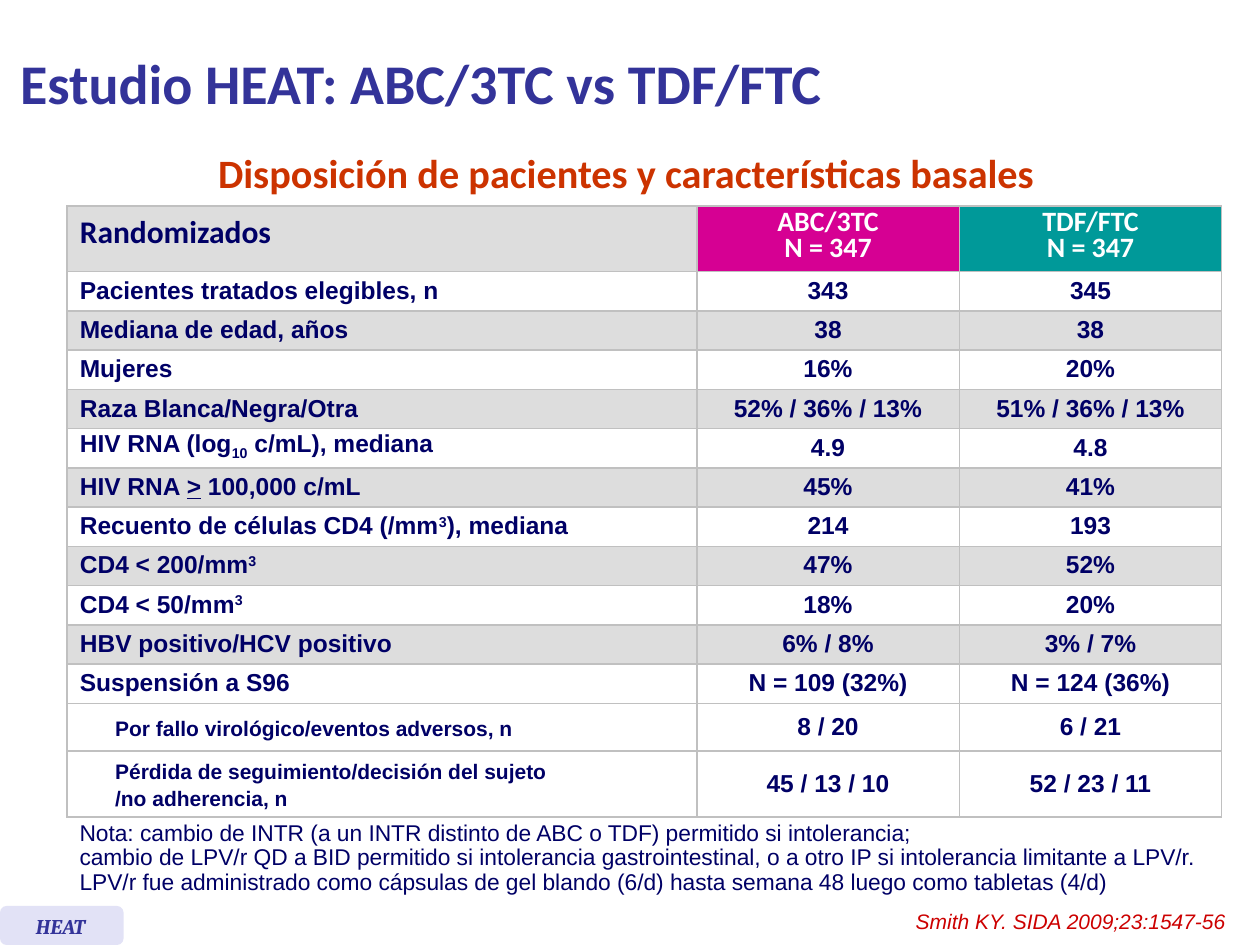
from typing import NamedTuple

from lxml import etree
from pptx import Presentation
from pptx.dml.color import RGBColor
from pptx.enum import shapes, text
from pptx.oxml import ns
from pptx.util import Pt

NAVY = RGBColor(0x00, 0x00, 0x66)
INDIGO = RGBColor(0x33, 0x33, 0x99)
RUST = RGBColor(0xCC, 0x33, 0x00)
RED = RGBColor(0xCC, 0x00, 0x00)
PINK = RGBColor(0xD6, 0x00, 0x93)
TEAL = RGBColor(0x00, 0x99, 0x99)
LILAC = RGBColor(0xE2, 0xE2, 0xF6)
GREY = RGBColor(0xDD, 0xDD, 0xDD)
EDGE = RGBColor(0xC0, 0xC0, 0xC0)
WHITE = RGBColor(0xFF, 0xFF, 0xFF)

LEAD = Pt(15.2)
COLS = (20.2, 339.6, 150, 150)
TALL, LOW = 37.6, 22.4
LEFT, MID = text.PP_ALIGN.LEFT, text.PP_ALIGN.CENTER


class Span(NamedTuple):
    text: str
    base: int = 0
    under: bool = False


class Row(NamedTuple):
    label: tuple
    abc: str
    tdf: str
    sub: bool = False


class Box(NamedTuple):
    left: float
    top: float
    width: float
    height: float


def plain(label: str, abc: str, tdf: str, sub: bool = False) -> Row:
    return Row((Span(label),), abc, tdf, sub)


CUBE = Span("3", 30)
ROWS = (
    plain("Pacientes tratados elegibles, n", "343", "345"),
    plain("Mediana de edad, años", "38", "38"),
    plain("Mujeres", "16%", "20%"),
    plain("Raza Blanca/Negra/Otra", "52% / 36% / 13%", "51% / 36% / 13%"),
    Row((Span("HIV RNA (log"), Span("10", -25), Span(" c/mL), mediana")), "4.9", "4.8"),
    Row((Span("HIV RNA "), Span(">", under=True), Span(" 100,000 c/mL")), "45%", "41%"),
    Row((Span("Recuento de células CD4 (/mm"), CUBE, Span("), mediana")), "214", "193"),
    Row((Span("CD4 < 200/mm"), CUBE), "47%", "52%"),
    Row((Span("CD4 < 50/mm"), CUBE), "18%", "20%"),
    plain("HBV positivo/HCV positivo", "6% / 8%", "3% / 7%"),
    plain("Suspensión a S96", "N = 109 (32%)", "N = 124 (36%)"),
    plain("Por fallo virológico/eventos adversos, n", "8 / 20", "6 / 21", True),
    plain("Pérdida de seguimiento/decisión del sujeto\n/no adherencia, n",
          "45 / 13 / 10", "52 / 23 / 11", True),
)
NOTES = (
    "Nota: cambio de INTR (a un INTR distinto de ABC o TDF) permitido si intolerancia;",
    "cambio de LPV/r QD a BID permitido si intolerancia gastrointestinal, "
    "o a otro IP si intolerancia limitante a LPV/r.",
    "LPV/r fue administrado como cápsulas de gel blando (6/d) hasta semana 48 "
    "luego como tabletas (4/d)",
)


def write(para, spans, *, size: float, color: RGBColor, face: str = "Arial",
          bold: bool = False, slant: bool = False, align=LEFT, lead=None) -> None:
    """Fill a paragraph with a string or spans; a newline is a line break."""
    para.alignment = align
    if lead is not None:
        para.line_spacing = lead
    for span in (Span(spans),) if isinstance(spans, str) else spans:
        for i, part in enumerate(span.text.split("\n")):
            if i:
                para.add_line_break()
            run = para.add_run()
            run.text = part
            font = run.font
            font.size, font.name, font.bold, font.italic = Pt(size), face, bold, slant
            font.color.rgb = color
            if span.under:
                font.underline = True
            if span.base:
                run._r.get_or_add_rPr().set("baseline", str(span.base * 1000))


def place(shape, box: Box) -> None:
    shape.left, shape.top, shape.width, shape.height = map(Pt, box)


def label(slide, box: Box, lines: tuple, wrap: bool = True, **form) -> None:
    frame = slide.shapes.add_textbox(*map(Pt, box)).text_frame
    frame.word_wrap = wrap
    for i, line in enumerate(lines):
        write(frame.add_paragraph() if i else frame.paragraphs[0], line, **form)


def edge(cell, sides: str) -> None:
    """Draw the named sides; any other side gets no line."""
    props = cell._tc.get_or_add_tcPr()
    for side in "LRTB":
        line = etree.SubElement(props, ns.qn(f"a:ln{side}"), w=str(Pt(1)))
        if side in sides:
            fill = etree.SubElement(line, ns.qn("a:solidFill"))
            etree.SubElement(fill, ns.qn("a:srgbClr"), val=str(EDGE))
        else:
            etree.SubElement(line, ns.qn("a:noFill"))


def fill_cell(cell, spans, fill: RGBColor, sides: str = "LRTB", **form) -> None:
    edge(cell, sides)
    cell.fill.solid()
    cell.fill.fore_color.rgb = fill
    cell.vertical_anchor = text.MSO_ANCHOR.MIDDLE
    write(cell.text_frame.paragraphs[0], spans, bold=True, lead=LEAD, **form)


def add_grid(slide) -> None:
    count = len(ROWS) + 1
    highs = [TALL] + [LOW] * (count - 2) + [TALL]
    box = Box(38.4, 117.6, sum(COLS), sum(highs))
    grid = slide.shapes.add_table(count, len(COLS), *map(Pt, box)).table
    for col, wide in zip(grid.columns, COLS):
        col.width = Pt(wide)
    for row, high in zip(grid.rows, highs):
        row.height = Pt(high)

    head = {"face": "Calibri"}
    grid.cell(0, 0).merge(grid.cell(0, 1))
    fill_cell(grid.cell(0, 0), "Randomizados", GREY, size=18, color=NAVY, **head)
    fill_cell(grid.cell(0, 1), "", GREY, size=14, color=NAVY)
    for col, arm, fill in ((2, "ABC/3TC", PINK), (3, "TDF/FTC", TEAL)):
        fill_cell(grid.cell(0, col), f"{arm}\nN = 347", fill,
                  size=16, color=WHITE, align=MID, **head)

    for i, row in enumerate(ROWS, 1):
        fill = WHITE if i % 2 or row.sub else GREY
        first, second = grid.cell(i, 0), grid.cell(i, 1)
        if row.sub:
            fill_cell(first, "", fill, "LTB", size=12, color=NAVY)
            fill_cell(second, row.label, fill, "RTB", size=12, color=NAVY)
        else:
            first.merge(second)
            fill_cell(first, row.label, fill, size=14, color=NAVY)
            fill_cell(second, "", fill, size=14, color=NAVY)
        for col, value in ((2, row.abc), (3, row.tdf)):
            fill_cell(grid.cell(i, col), value, fill, size=14, color=NAVY, align=MID)


def add_badge(slide) -> None:
    badge = slide.shapes.add_shape(shapes.MSO_SHAPE.ROUNDED_RECTANGLE,
                                   *map(Pt, (0, 517.7, 70.6, 22.3)))
    badge.shadow.inherit = False
    badge.fill.solid()
    badge.fill.fore_color.rgb = LILAC
    badge.line.fill.background()
    label(slide, Box(13.4, 518.4, 44, 21.6), ("HEAT",), wrap=False,
          size=12, color=INDIGO, face="Cambria", bold=True, slant=True)


def main() -> None:
    deck = Presentation()
    deck.slide_width, deck.slide_height = Pt(720), Pt(540)
    slide = deck.slides.add_slide(deck.slide_layouts[5])

    title = slide.shapes.title
    place(title, Box(4.3, 3.6, 645, 87))
    title.text_frame.vertical_anchor = text.MSO_ANCHOR.MIDDLE
    write(title.text_frame.paragraphs[0], "Estudio HEAT: ABC/3TC vs TDF/FTC",
          size=32, color=INDIGO, face="Calibri", bold=True)

    add_grid(slide)
    label(slide, Box(38.4, 465.8, 684, 49.7), NOTES, size=13, color=NAVY, lead=0.9)
    label(slide, Box(76.3, 93.6, 563.8, 22.4),
          ("Disposición de pacientes y características basales",),
          size=23, color=RUST, face="Calibri", bold=True, align=MID, lead=LEAD)
    add_badge(slide)
    label(slide, Box(516.2, 515.5, 193, 21.6), ("Smith KY. SIDA 2009;23:1547-56",),
          wrap=False, size=12, color=RED, slant=True)
    deck.save("out.pptx")


if __name__ == "__main__":
    main()
